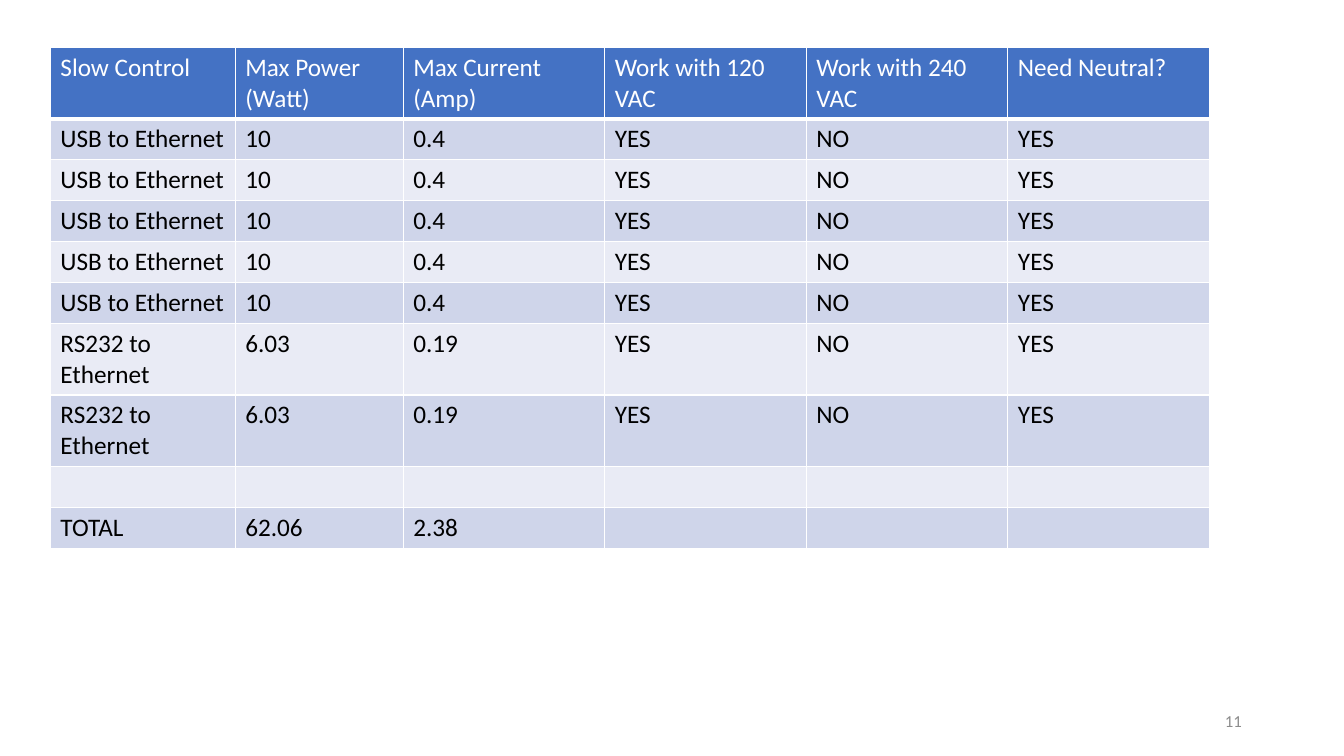
from dataclasses import dataclass

from lxml import etree
from pptx import Presentation, util as u
from pptx.dml import color
from pptx.enum import text
from pptx.oxml import ns


@dataclass(frozen=True)
class Theme:
    font: str = "Calibri"
    header_fill: str = "4472C4"
    bands: tuple[str, str] = ("CFD5EA", "E9EBF5")
    border: str = "FFFFFF"
    header_text: str = "FFFFFF"
    body_text: str = "000000"
    muted_text: str = "8C8C8C"
    table_size: int = 18
    number_size: int = 12
    thin_line: int = 1
    thick_line: int = 3


@dataclass(frozen=True)
class Load:
    name: str
    power: str
    current: str
    count: int

    def row(self) -> list[str]:
        return [self.name, self.power, self.current, "YES", "NO", "YES"]


THEME = Theme()
SLIDE_WIDTH = u.Inches(13.33)
SLIDE_HEIGHT = u.Inches(7.5)
COLUMN_SHARES = [13.75, 12.5, 15, 15, 15, 15]
ROW_SHARE = 5.4
HEADINGS = [
    "Slow Control",
    "Max Power (Watt)",
    "Max Current (Amp)",
    "Work with 120 VAC",
    "Work with 240 VAC",
    "Need Neutral?",
]
LOADS = [
    Load("USB to Ethernet", "10", "0.4", 5),
    Load("RS232 to Ethernet", "6.03", "0.19", 2),
]
TOTAL = ["TOTAL", "62.06", "2.38", "", "", ""]


def across(share: float) -> int:
    return round(SLIDE_WIDTH * share / 100)


def down(share: float) -> int:
    return round(SLIDE_HEIGHT * share / 100)


def write_text(frame, content: str, *, size: int, colour: str,
               align=text.PP_ALIGN.LEFT) -> None:
    paragraph = frame.paragraphs[0]
    paragraph.alignment = align
    run = paragraph.add_run()
    run.text = content
    run.font.name = THEME.font
    run.font.size = u.Pt(size)
    run.font.bold = False
    run.font.color.rgb = color.RGBColor.from_string(colour)


def set_borders(cell, bottom_width: int) -> None:
    properties = cell._tc.get_or_add_tcPr()
    widths = {"lnL": THEME.thin_line, "lnR": THEME.thin_line,
              "lnT": THEME.thin_line, "lnB": bottom_width}
    for position, (side, width) in enumerate(widths.items()):
        line = etree.Element(ns.qn(f"a:{side}"), w=str(u.Pt(width)))
        fill = etree.SubElement(line, ns.qn("a:solidFill"))
        etree.SubElement(fill, ns.qn("a:srgbClr"), val=THEME.border)
        properties.insert(position, line)


def format_cell(cell, content: str, row_index: int) -> None:
    is_header = row_index == 0
    fill = THEME.header_fill if is_header else THEME.bands[(row_index - 1) % 2]
    cell.fill.solid()
    cell.fill.fore_color.rgb = color.RGBColor.from_string(fill)
    set_borders(cell, THEME.thick_line if is_header else THEME.thin_line)
    if content:
        write_text(cell.text_frame, content, size=THEME.table_size,
                   colour=THEME.header_text if is_header else THEME.body_text)


def add_power_table(slide) -> None:
    load_rows = [load.row() for load in LOADS for _ in range(load.count)]
    rows = [HEADINGS, *load_rows, [""] * len(HEADINGS), TOTAL]
    table = slide.shapes.add_table(
        len(rows), len(HEADINGS), across(3.75), down(6.25),
        across(sum(COLUMN_SHARES)), down(ROW_SHARE * len(rows))).table
    for column, share in zip(table.columns, COLUMN_SHARES):
        column.width = across(share)
    for row_index, values in enumerate(rows):
        table.rows[row_index].height = down(ROW_SHARE)
        for column_index, content in enumerate(values):
            format_cell(table.cell(row_index, column_index), content, row_index)


def add_slide_number(slide, number: str) -> None:
    shape = slide.shapes.add_textbox(across(70.65), down(92.7), across(22.5), down(5.3))
    shape.text_frame.word_wrap = True
    shape.text_frame.vertical_anchor = text.MSO_ANCHOR.MIDDLE
    write_text(shape.text_frame, number, size=THEME.number_size,
               colour=THEME.muted_text, align=text.PP_ALIGN.RIGHT)


def main() -> None:
    presentation = Presentation()
    presentation.slide_width = SLIDE_WIDTH
    presentation.slide_height = SLIDE_HEIGHT
    slide = presentation.slides.add_slide(presentation.slide_layouts[6])
    add_power_table(slide)
    add_slide_number(slide, "11")
    presentation.save("out.pptx")


if __name__ == "__main__":
    main()
